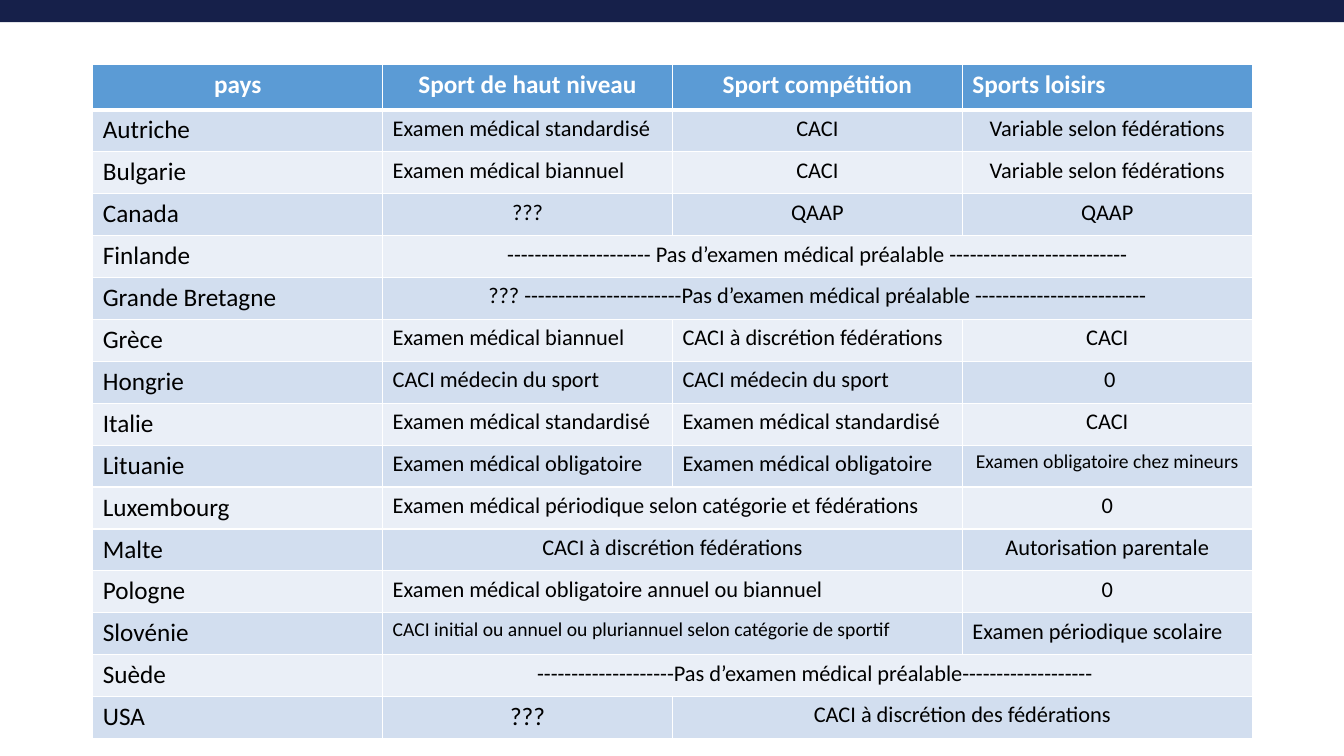
from collections import namedtuple
from dataclasses import dataclass

from lxml import etree
from pptx import Presentation
from pptx.dml.color import RGBColor
from pptx.enum.shapes import MSO_SHAPE
from pptx.enum.text import PP_ALIGN
from pptx.oxml.ns import qn
from pptx.util import Inches, Pt

LEFT, CENTER = PP_ALIGN.LEFT, PP_ALIGN.CENTER
RECTANGLE = MSO_SHAPE.RECTANGLE


@dataclass(frozen=True)
class Theme:
    font: str = "Calibri"
    navy: str = "16204A"
    header: str = "5B9BD5"
    bands: tuple = ("D2DEEF", "EAEFF7")
    white: str = "FFFFFF"
    black: str = "000000"
    large: int = 18
    body: int = 16
    small: int = 14
    thin: int = 1
    thick: int = 3


THEME = Theme()
Entry = namedtuple("Entry", "text align span size", defaults=(CENTER, 1, THEME.body))

HEADER = [
    Entry("pays", size=THEME.large),
    Entry("Sport de haut niveau", size=THEME.large),
    Entry("Sport compétition", size=THEME.large),
    Entry("Sports loisirs", LEFT, size=THEME.large),
]
STANDARD = Entry("Examen médical standardisé", LEFT)
BIANNUAL = Entry("Examen médical biannuel", LEFT)
MANDATORY = Entry("Examen médical obligatoire", LEFT)
SPORT_DOCTOR = Entry("CACI médecin du sport", LEFT)
CACI = Entry("CACI")
QAAP = Entry("QAAP")
VARIABLE = Entry("Variable selon fédérations")
UNKNOWN = Entry("???")
NONE = Entry("0")

COUNTRIES = {
    "Autriche": [STANDARD, CACI, VARIABLE],
    "Bulgarie": [BIANNUAL, CACI, VARIABLE],
    "Canada": [UNKNOWN, QAAP, QAAP],
    "Finlande": [Entry(
        "--------------------- Pas d’examen médical préalable --------------------------", span=3)],
    "Grande Bretagne": [Entry(
        "??? -----------------------Pas d’examen médical préalable -------------------------", span=3)],
    "Grèce": [BIANNUAL, Entry("CACI à discrétion fédérations", LEFT), CACI],
    "Hongrie": [SPORT_DOCTOR, SPORT_DOCTOR, Entry(" 0")],
    "Italie": [STANDARD, STANDARD, CACI],
    "Lituanie": [MANDATORY, MANDATORY,
                 Entry("Examen obligatoire chez mineurs", size=THEME.small)],
    "Luxembourg": [Entry("Examen médical périodique selon catégorie et fédérations", LEFT, 2), NONE],
    "Malte": [Entry("CACI à discrétion fédérations", span=2), Entry("Autorisation parentale")],
    "Pologne": [Entry("Examen médical obligatoire annuel ou biannuel", LEFT, 2), NONE],
    "Slovénie": [
        Entry("CACI initial ou annuel ou pluriannuel selon catégorie de sportif", LEFT, 2, THEME.small),
        Entry("Examen périodique scolaire", LEFT)],
    "Suède": [Entry(
        "--------------------Pas d’examen médical préalable------------------- ", span=3)],
    "USA": [Entry("???", size=THEME.large), Entry("CACI à discrétion des fédérations", span=2)],
}


def set_borders(cell, bottom_width):
    properties = cell._tc.get_or_add_tcPr()
    for side in ("L", "R", "T", "B"):
        width = bottom_width if side == "B" else THEME.thin
        line = etree.SubElement(properties, qn(f"a:ln{side}"), w=str(Pt(width)))
        fill = etree.SubElement(line, qn("a:solidFill"))
        etree.SubElement(fill, qn("a:srgbClr"), val=THEME.white)


presentation = Presentation()
presentation.slide_width = Inches(13.33)
presentation.slide_height = Inches(7.5)
slide = presentation.slides.add_slide(presentation.slide_layouts[6])

top_band = slide.shapes.add_shape(RECTANGLE, 0, Inches(-0.03), Inches(13.33), Inches(0.25))
top_band.shadow.inherit = False
top_band.fill.solid()
top_band.fill.fore_color.rgb = RGBColor.from_string(THEME.navy)
top_band.line.fill.background()

rows = [HEADER] + [
    [Entry(country, LEFT, size=THEME.large), *entries] for country, entries in COUNTRIES.items()
]
table = slide.shapes.add_table(
    len(rows), len(HEADER), Inches(0.92), Inches(0.64), Inches(11.5), Inches(6.69)
).table
for column in table.columns:
    column.width = Inches(11.5 / len(HEADER))
for row in table.rows:
    row.height = Inches((6.69 - 0.45) / len(COUNTRIES))
table.rows[0].height = Inches(0.45)

for row_index, entries in enumerate(rows):
    is_header = row_index == 0
    fill_color = THEME.header if is_header else THEME.bands[(row_index - 1) % 2]
    for cell in table.rows[row_index].cells:
        set_borders(cell, THEME.thick if is_header else THEME.thin)
        cell.fill.solid()
        cell.fill.fore_color.rgb = RGBColor.from_string(fill_color)

    column_index = 0
    for entry in entries:
        cell = table.cell(row_index, column_index)
        if entry.span > 1:
            cell.merge(table.cell(row_index, column_index + entry.span - 1))
        column_index += entry.span
        paragraph = cell.text_frame.paragraphs[0]
        paragraph.alignment = entry.align
        run = paragraph.add_run()
        run.text = entry.text
        font_format = {"name": THEME.font, "size": Pt(entry.size), "bold": is_header}
        for attribute, value in font_format.items():
            setattr(run.font, attribute, value)
        run.font.color.rgb = RGBColor.from_string(THEME.white if is_header else THEME.black)

presentation.save("out.pptx")
